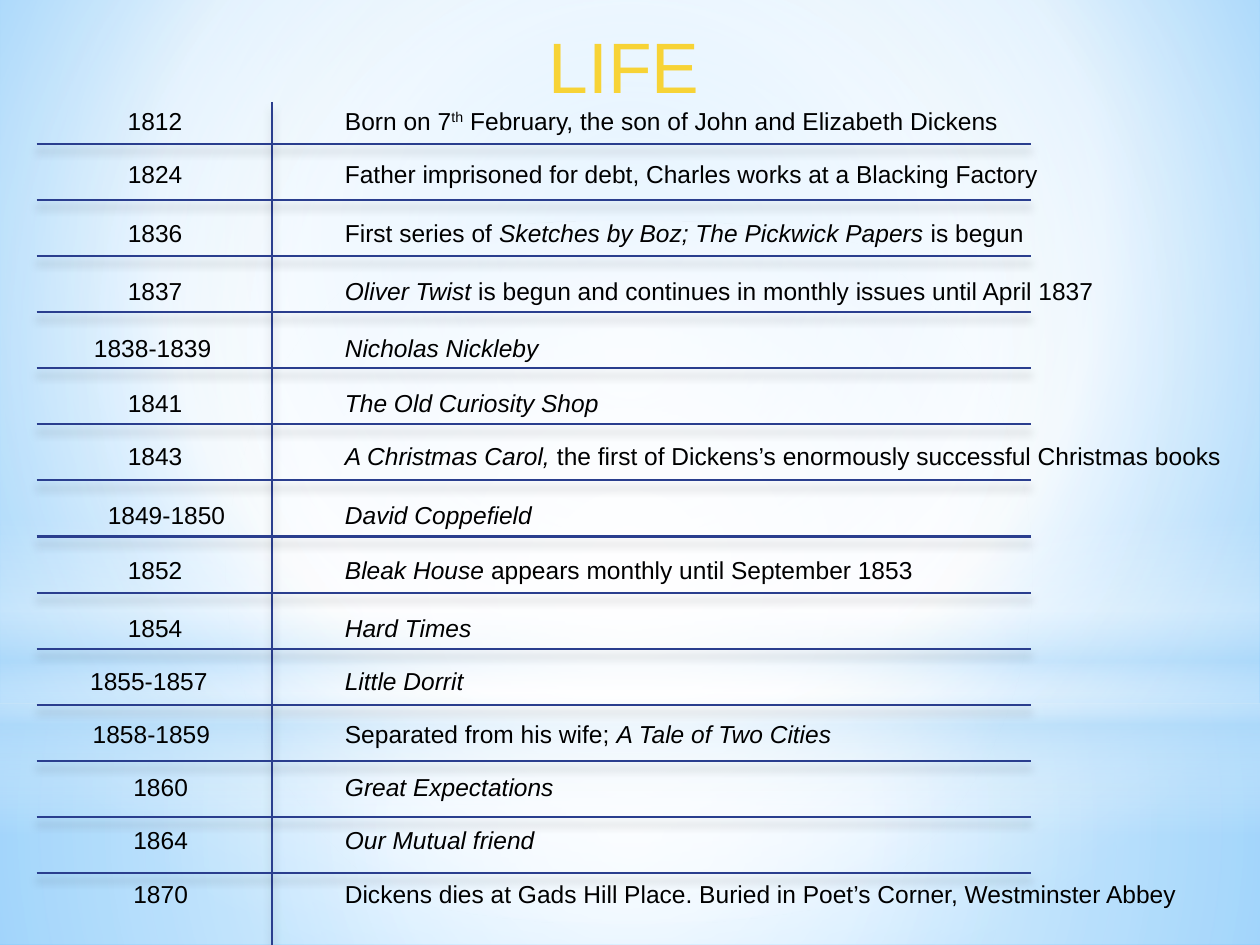
"""Build a one-page timeline of the life of Charles Dickens."""
from dataclasses import dataclass

from lxml import etree
from pptx import Presentation
from pptx import util as u
from pptx.dml import color
from pptx.enum import shapes, text
from pptx.oxml import ns


@dataclass(frozen=True)
class Theme:
    """Hold the colours and type sizes of the page."""
    font: str = "Arial"
    title_size: float = 40.8
    body_size: float = 14
    title: str = "F7D336"
    ink: str = "000000"
    rule: str = "2A3E8E"
    white: str = "FFFFFF"
    sky: str = "B4DCFA"
    pale: str = "9ED5FF"
    deep: str = "5BB9FF"


THEME = Theme()
CENTRE = (50, 50, 50, 50)
FACT_LEFT, ROW_HEIGHT = 190, 24.5
RULE_LEFT, RULE_RIGHT, RULE_TOP, RULE_GAP, RULE_COUNT = 20.9, 589, 82.1, 32.07, 14
ITALIC, RAISED = {"italic": True}, {"baseline": 30000}
YEAR, SPAN = (35.3, 79.9), (25.2, 104.4)
LATE = (69.1, 49.7)

ROWS = [
    (56.9, "1812 ", (61.9, 53.3), 414,
     [("Born on 7", {}), ("th", RAISED), (" February, the son of John and Elizabeth Dickens", {})]),
    (87.1, "1824 ", (25.2, 90), 436.3,
     [("Father imprisoned for debt, Charles works at a Blacking Factory", {})]),
    (121, "1836 ", YEAR, 450.7,
     [("First series of ", {}), ("Sketches by Boz; The Pickwick Papers ", ITALIC), ("is begun", {})]),
    (154.1, "1837 ", YEAR, 458.6,
     [("Oliver Twist ", ITALIC), ("is begun and continues in monthly issues until April 1837", {})]),
    (186.5, "1838-1839 ", (31, 100.8), 129.6, [("Nicholas Nickleby", ITALIC)]),
    (218.2, "1841 ", YEAR, 164.2, [("The Old Curiosity Shop", ITALIC)]),
    (248.4, "1843 ", YEAR, 519.8,
     [("A Christmas Carol, ", ITALIC),
      ("the first of Dickens’s enormously successful Christmas books", {})]),
    (282.2, "1849-1850 ", (35.3, 104.4), 123, [("David Coppefield", ITALIC)]),
    (313.9, "1852 ", YEAR, 423.4,
     [("Bleak House ", ITALIC), ("appears monthly until September 1853", {})]),
    (347, "1854 ", YEAR, 90.7, [("Hard Times", ITALIC)]),
    (377, "1855-1857 ", SPAN, 407.5, [("Little Dorrit", ITALIC)]),
    (407.5, "1858-1859 ", (35.3, 95.8), 302.4,
     [("Separated from his wife; ", {}), ("A Tale of Two Cities", ITALIC)]),
    (437.8, "1860", LATE, 138.2, [("Great Expectations", ITALIC)]),
    (468, "1864", LATE, 127.4, [("Our Mutual friend", ITALIC)]),
    (499, "1870", LATE, 493.9,
     [("Dickens dies at Gads Hill Place. Buried in Poet’s Corner, Westminster Abbey", {})]),
]


def apply(target, values):
    """Set each named attribute of the target."""
    for name, value in values.items():
        setattr(target, name, value)


def add_node(parent, tag, **attributes):
    """Append a drawing element with its attributes."""
    values = {name: str(value) for name, value in attributes.items()}
    return etree.SubElement(parent, ns.qn(f"a:{tag}"), values)


def add_colour(parent, value, opacity=100):
    """Append a colour with its opacity in percent."""
    node = add_node(parent, "srgbClr", val=value)
    if opacity < 100:
        add_node(node, "alpha", val=opacity * 1000)


def set_gradient(fill, stops, focus=None):
    """Fill with a circular gradient, or a downward one without focus."""
    fill.gradient()
    gradient = fill._xPr.find(ns.qn("a:gradFill"))
    gradient.clear()
    gradient.set("rotWithShape", "1")
    stop_list = add_node(gradient, "gsLst")
    for position, *colour in stops:
        add_colour(add_node(stop_list, "gs", pos=position * 1000), *colour)
    if focus:
        sides = {side: share * 1000 for side, share in zip("ltrb", focus)}
        add_node(add_node(gradient, "path", path="circle"), "fillToRect", **sides)
    else:
        add_node(gradient, "lin", ang=5400000, scaled=0)


def add_glow(page, kind, top, height, stops, focus=CENTRE):
    """Add a full-width translucent shape to the backdrop."""
    glow = page.shapes.add_shape(kind, 0, u.Pt(top), u.Pt(720), u.Pt(height))
    glow.shadow.inherit = False
    glow.line.fill.background()
    set_gradient(glow.fill, stops, focus)


def add_backdrop(page):
    """Paint the background and its layers of light."""
    white, sky = THEME.white, THEME.sky
    box, oval = shapes.MSO_SHAPE.RECTANGLE, shapes.MSO_SHAPE.OVAL
    set_gradient(page.background.fill,
                 [(0, THEME.pale), (60, white), (100, THEME.deep)], (20, 10, 20, 60))
    add_glow(page, box, 401.8, 138.2, [(0, white, 91), (37, white, 76), (100, sky, 79)])
    add_glow(page, box, 0, 401.8, [(0, white, 89), (48, white, 62), (100, sky, 79)])
    add_glow(page, box, 296.6, 180,
             [(0, white, 0), (29, white, 30), (45, sky, 40),
              (55, white, 26), (65, sky, 60), (100, white, 0)], None)
    add_glow(page, oval, 126, 401.8, [(0, white), (56, white, 0)])


def add_text(page, place, spans, align, size=THEME.body_size, ink=THEME.ink, **frame):
    """Add a one-paragraph text box made of formatted spans."""
    box = page.shapes.add_textbox(*map(u.Pt, place))
    apply(box.text_frame, {"word_wrap": True, **frame})
    para = box.text_frame.paragraphs[0]
    para.alignment = align
    for words, style in spans:
        span = para.add_run()
        span.text = words
        apply(span.font, {"name": THEME.font, "size": u.Pt(size),
                          "italic": style.get("italic", False)})
        span.font.color.rgb = color.RGBColor.from_string(ink)
        if "baseline" in style:
            span._r.get_or_add_rPr().set("baseline", str(style["baseline"]))


def add_rule(page, *ends):
    """Add a thin line with a soft shadow below it."""
    rule = page.shapes.add_connector(shapes.MSO_CONNECTOR.STRAIGHT, *map(u.Pt, ends))
    rule.line.width = u.Pt(1.25)
    rule.line.color.rgb = color.RGBColor.from_string(THEME.rule)
    effects = add_node(rule._element.spPr, "effectLst")
    shadow = add_node(effects, "outerShdw", blurRad=u.Pt(5), dist=u.Pt(4),
                      dir=5400000, rotWithShape=0)
    add_colour(shadow, THEME.ink, 20)


def add_row(page, top, year, year_place, fact_width, spans):
    """Add a year and the events that belong to it."""
    left, width = year_place
    align = text.PP_ALIGN.LEFT if year_place == LATE else text.PP_ALIGN.RIGHT
    grow = {"auto_size": text.MSO_AUTO_SIZE.SHAPE_TO_FIT_TEXT}
    add_text(page, (left, top, width, ROW_HEIGHT), [(year, {})], align, **grow)
    add_text(page, (FACT_LEFT, top, fact_width, ROW_HEIGHT), spans,
             text.PP_ALIGN.LEFT, **grow)


def main():
    """Build and save the deck."""
    deck = Presentation()
    apply(deck, {"slide_width": u.Pt(720), "slide_height": u.Pt(540)})
    page = deck.slides.add_slide(deck.slide_layouts[6])
    add_backdrop(page)
    add_text(page, (19.4, 5, 671, 49.7), [("LIFE", {})], text.PP_ALIGN.CENTER,
             THEME.title_size, THEME.title, margin_left=u.Pt(10.8),
             margin_top=u.Pt(7.6), margin_bottom=0)
    add_rule(page, 155.5, 58.3, 155.5, 540)
    for index in range(RULE_COUNT):
        height = RULE_TOP + index * RULE_GAP
        add_rule(page, RULE_LEFT, height, RULE_RIGHT, height)
    for row in ROWS:
        add_row(page, *row)
    deck.save("out.pptx")


if __name__ == "__main__":
    main()
